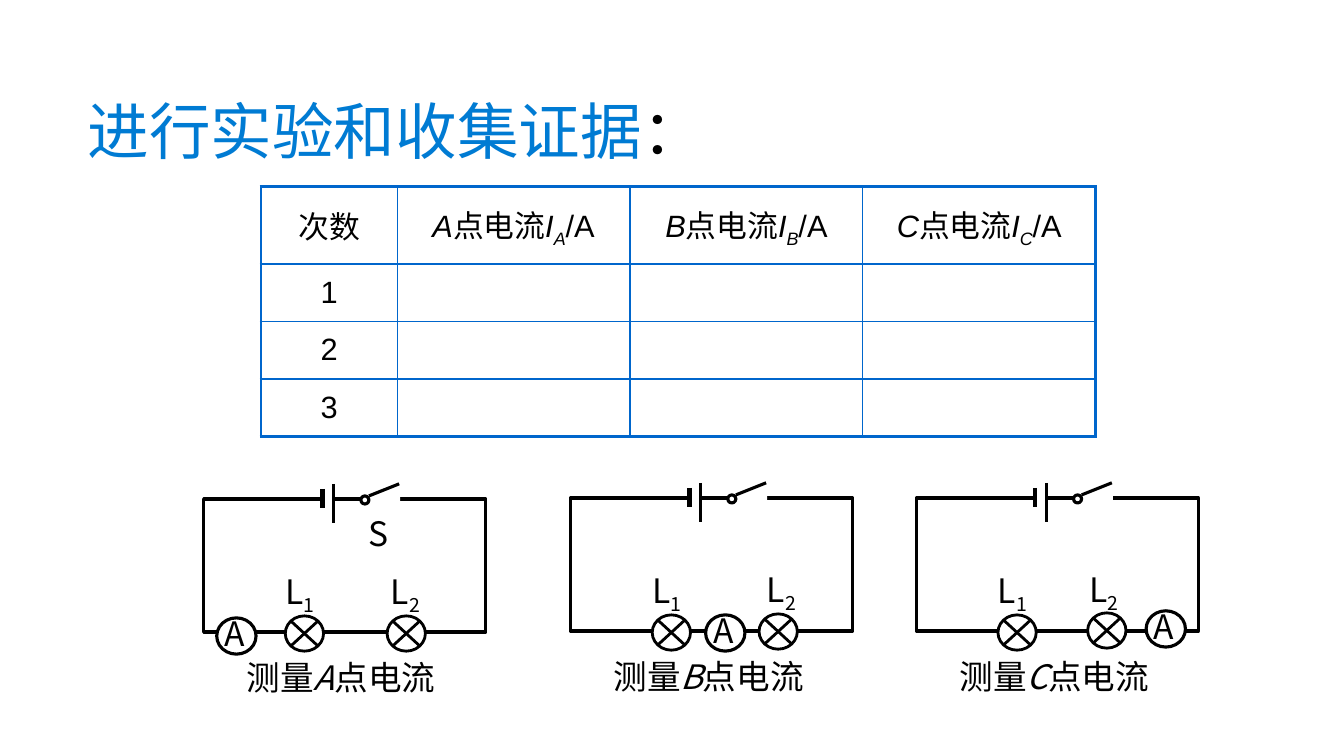
import pptx
import pptx.util
import pptx.dml.color
import pptx.enum.shapes
import pptx.enum.text
import pptx.oxml
import pptx.oxml.ns
import lxml.etree

COLORS = {"ink": "000000", "paper": "FFFFFF", "title": "007BD3", "rule": "0066CC"}
CJK = "Noto Sans CJK SC"
SHAPES = pptx.enum.shapes.MSO_SHAPE
CELL = 0.1  # side of one layout grid cell, in inches
SUBSCRIPT = "-25000"


def grid(cells):
    return pptx.util.Inches(cells * CELL)


def rgb(name):
    return pptx.dml.color.RGBColor.from_string(COLORS[name])


def add_child(parent, tag, **attributes):
    child = lxml.etree.SubElement(parent, pptx.oxml.ns.qn(tag))
    for key, value in attributes.items():
        child.set(key, value)
    return child


def write(frame, runs, size, face=CJK, spacing=None, align=None):
    """Fill a text frame; each run is (text, marks): i italic, s subscript, t title colour."""
    line = frame.paragraphs[0]
    line.font.size = pptx.util.Pt(size)
    line.font.name = face
    line.font.color.rgb = rgb("ink")
    if face == CJK:
        add_child(line.font._element, "a:ea", typeface=face)
    if spacing:
        line.line_spacing = spacing
    if align:
        line.alignment = align
    for text, marks in runs:
        run = line.add_run()
        run.text = text
        if "i" in marks:
            run.font.italic = True
        if "s" in marks:
            run.font._element.set("baseline", SUBSCRIPT)
        if "t" in marks:
            run.font.color.rgb = rgb("title")


def add_label(shapes, box, runs, size=24, wrap=True, spacing=None):
    label = shapes.add_textbox(*map(grid, box))
    label.text_frame.word_wrap = wrap
    label.text_frame.auto_size = pptx.enum.text.MSO_AUTO_SIZE.SHAPE_TO_FIT_TEXT
    write(label.text_frame, runs, size, spacing=spacing)


def add_part(shapes, kind, box, weight=None, filled=True):
    part = shapes.add_shape(kind, *map(grid, box))
    part.shadow.inherit = False
    if filled:
        part.fill.solid()
        part.fill.fore_color.rgb = rgb("paper")
    else:
        part.fill.background()
    if weight:
        part.line.color.rgb = rgb("ink")
        part.line.width = pptx.util.Pt(weight)
    else:
        part.line.fill.background()


def add_wire(shapes, start, end, weight=2.25):
    wire = shapes.add_connector(
        pptx.enum.shapes.MSO_CONNECTOR.STRAIGHT, *map(grid, (*start, *end)))
    wire.line.color.rgb = rgb("ink")
    wire.line.width = pptx.util.Pt(weight)
    add_child(wire._element.spPr, "a:effectLst")


def add_circuit(slide, box, point, lamp2, label2, ammeter):
    """Draw one circuit; lamp2, label2 and ammeter are offsets in its box."""
    left, top, width, height = box
    parts = slide.shapes.add_group_shape().shapes

    def at(x, y):
        return left + x, top + y

    # Loop, battery and open switch
    add_part(parts, SHAPES.RECTANGLE, box, 2.25, filled=False)
    add_part(parts, SHAPES.RECTANGLE, (*at(16.4, -0.3), 3.1, 1.5))
    add_wire(parts, at(16.4, -0.3), at(19.4, -1.5))
    add_part(parts, SHAPES.OVAL, (*at(15.6, -0.3), 0.8, 0.8), 2.25)
    add_part(parts, SHAPES.RECTANGLE, (*at(12, -0.4), 1, 1))
    add_wire(parts, at(12.9, -1.5), at(12.9, 2.4))
    add_wire(parts, at(11.8, -1), at(11.8, 0.9), 3)

    # Lamps
    lamps = (("1", (8.1, 11.6), (7.1, 6.6)), ("2", lamp2, label2))
    for number, lamp, label in lamps:
        add_part(parts, SHAPES.FLOWCHART_SUMMING_JUNCTION, (*at(*lamp), 3.8, 3.5), 2)
        add_label(parts, (*at(*label), 5.2, 5), [("L", ""), (number, "s")], wrap=False)

    # Ammeter and caption
    x, y = ammeter
    add_part(parts, SHAPES.OVAL, (*at(x, y), 3.9, 3.6), 2.25)
    add_label(parts, (*at(x - 0.2, y - 1), 5, 5), [("A", "")])
    add_label(parts, (*at(3.3, 14.4), 20.9, 5.4),
              [("测量", ""), (point, "i"), ("点电流", "")], spacing=1.2)


def add_borders(cell, weights):
    properties = cell._tc.get_or_add_tcPr()
    for side, weight in zip("LRTB", weights):
        edge = add_child(properties, f"a:ln{side}", w=str(pptx.util.Pt(weight)))
        add_child(add_child(edge, "a:solidFill"), "a:srgbClr", val=COLORS["rule"])


def add_readings(slide, box, points, trials):
    left, top, width, height = box
    header = [[("次数", "")]] + [
        [(point, "i"), ("点电流", ""), ("I", "i"), (point, "is"), ("/A", "")]
        for point in points]
    rows = [header] + [[[(str(trial), "")]] + [[]] * len(points)
                       for trial in range(1, trials + 1)]
    table = slide.shapes.add_table(len(rows), len(header), *map(grid, box)).table
    table.first_row = table.horz_banding = False

    first_width, first_height = 13.5, 7.7
    for number, column in enumerate(table.columns):
        column.width = grid((width - first_width) / len(points) if number else first_width)
    for number, row in enumerate(table.rows):
        row.height = grid((height - first_height) / trials if number else first_height)

    for r, row in enumerate(rows):
        for c, runs in enumerate(row):
            cell = table.cell(r, c)
            outer = (c == 0, c == len(points), r == 0, r == trials)
            add_borders(cell, [2.25 if edge else 1 for edge in outer])
            cell.fill.background()
            cell.vertical_anchor = pptx.enum.text.MSO_ANCHOR.MIDDLE
            write(cell.text_frame, runs, 22, "Arial",
                  align=pptx.enum.text.PP_ALIGN.CENTER)


def main():
    deck = pptx.Presentation()
    deck.slide_width, deck.slide_height = grid(133.33), grid(75)
    slide = deck.slides.add_slide(deck.slide_layouts[6])

    # Circuits for points A, B and C
    add_circuit(slide, (20.2, 49.5, 28, 13.2), "A", (18.2, 11.6), (17.6, 6.6), (1.3, 11.8))
    add_label(slide.shapes, (35.6, 50.4, 4.9, 5), [("S", "")])
    add_circuit(slide, (56.6, 49.4, 28, 13.2), "B", (18.7, 11.5), (18.5, 6.5), (13.4, 11.6))
    add_circuit(slide, (90.9, 49.4, 28, 13.2), "C", (17, 11.4), (16.2, 6.5), (22.8, 11.2))

    # Title and readings
    add_label(slide.shapes, (7.7, 5.1, 114.7, 12.1),
              [("进行实验和收集证据", "t"), ("：", "")], size=44, spacing=1.5)
    add_readings(slide, (25.9, 18.5, 82.8, 24.8), "ABC", 3)

    deck.save("out.pptx")


if __name__ == "__main__":
    main()
